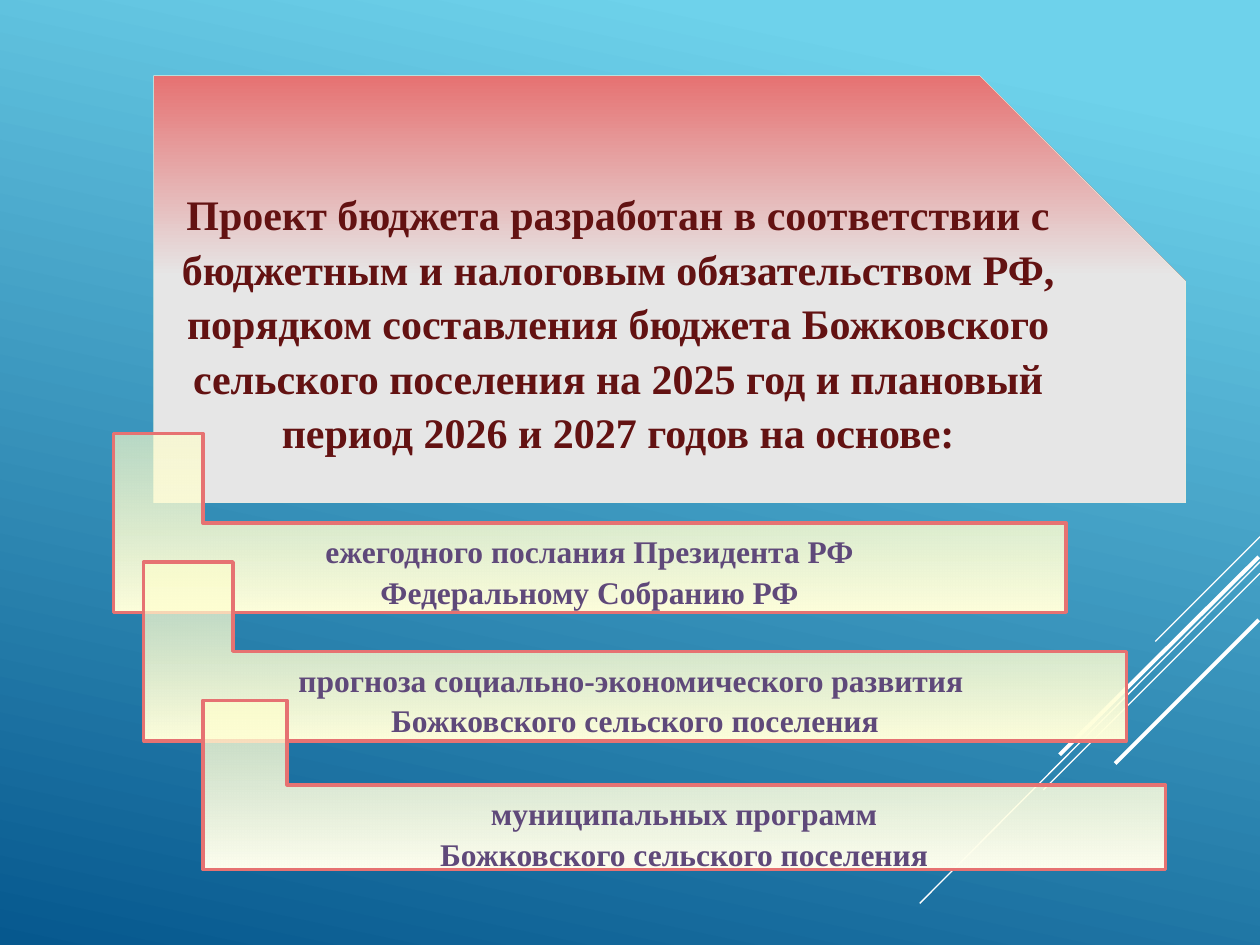
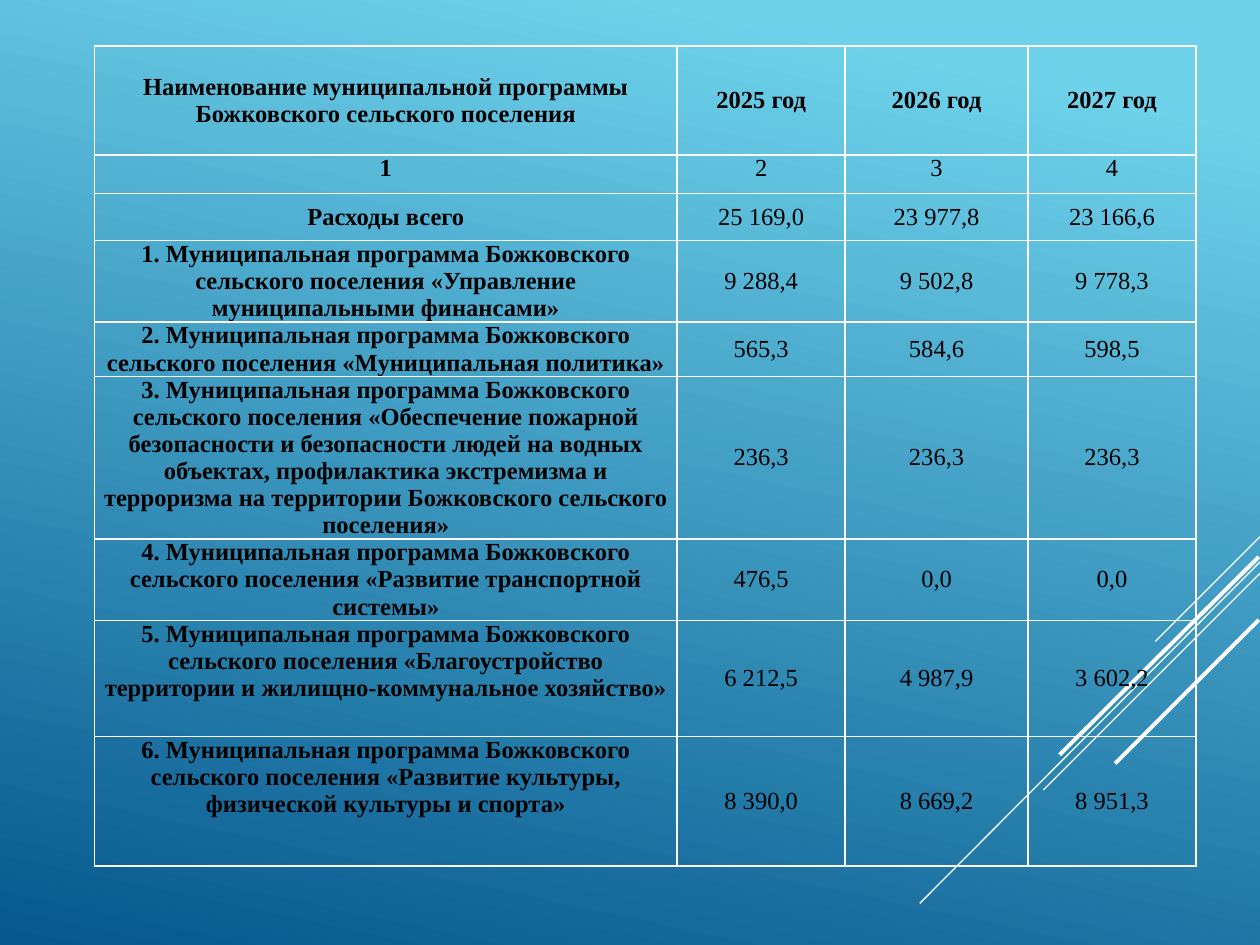
import pptx
import pptx.dml.color
import pptx.enum.shapes
import pptx.enum.text
import pptx.oxml
import pptx.oxml.ns
import pptx.util
from lxml import etree

Pt = pptx.util.Pt
Shapes = pptx.enum.shapes.MSO_SHAPE
Anchor = pptx.enum.text.MSO_ANCHOR
qn = pptx.oxml.ns.qn

FONT = "Times New Roman"
COLORS = {
    "sky": "6ED2EB", "deep": "06588E", "white": "FFFFFF", "black": "000000",
    "coral": "E67272", "grey": "E6E6E6", "mint": "EAF1DD", "maroon": "631212",
    "violet": "5F497A", "cream": "FFFFCC", "pale": "FFFFDB", "ivory": "FFFFEF",
}

# start x, start y, end x, end y, width
STRIPES = [
    (720, 306.7, 660.2, 366.5, 0.75),
    (720, 321.1, 525.6, 516.2, 0.75),
    (720, 327.6, 596.2, 451.4, 0.75),
    (719.3, 318.2, 605.5, 431.3, 2.25),
    (719.3, 354.2, 637.2, 436.3, 2.25),
]

HEADING = (
    "Проект бюджета разработан в соответствии с бюджетным и налоговым "
    "обязательством РФ, порядком составления бюджета Божковского сельского "
    "поселения на 2025 год и плановый период 2026 и 2027 годов на основе:"
)

# position and size, lower gradient colour, opacity at the top, lines
STEPS = [
    ((64.8, 247.7, 544.3, 102.2), "pale", 64,
     ["ежегодного послания Президента РФ", "Федеральному Собранию РФ"]),
    ((82.1, 321.1, 561.6, 102.2), "pale", 60,
     ["прогноза социально-экономического развития ",
      "Божковского сельского поселения"]),
    ((115.9, 400.3, 550.1, 96.5), "ivory", 70,
     ["муниципальных программ", "Божковского сельского поселения"]),
]

PROGRAM = "Муниципальная программа Божковского сельского поселения"
COLUMN_WIDTHS = [333, 96, 104.5, 96]
# row height, cells
BUDGET_ROWS = [
    (62.3, ["Наименование муниципальной программы Божковского сельского поселения",
            "2025 год", "2026 год", "2027 год"]),
    (22, ["1", "2", "3", "4"]),
    (27.1, ["Расходы всего", "25 169,0", "23 977,8", "23 166,6"]),
    (46.5, [f"1. {PROGRAM} «Управление муниципальными финансами»",
            "9 288,4", "9 502,8", "9 778,3"]),
    (31, [f"2. {PROGRAM} «Муниципальная политика»",
          "565,3", "584,6", "598,5"]),
    (93, [f"3. {PROGRAM} «Обеспечение пожарной безопасности и безопасности "
          "людей на водных объектах, профилактика экстремизма и терроризма "
          "на территории Божковского сельского поселения»",
          "236,3", "236,3", "236,3"]),
    (46.5, [f"4. {PROGRAM} «Развитие транспортной системы»",
            "476,5", "0,0", "0,0"]),
    (66.5, [f"5. {PROGRAM} «Благоустройство территории и "
            "жилищно-коммунальное хозяйство»",
            "6 212,5", "4 987,9", "3 602,2"]),
    (74, [f"6. {PROGRAM} «Развитие культуры, физической культуры и спорта»",
          "8 390,0", "8 669,2", "8 951,3"]),
]


def rgb(name):
    return pptx.dml.color.RGBColor.from_string(COLORS[name])


def write_text(frame, lines, size, color, bold=True, spacing=1.0):
    """Fill a text frame with centred paragraphs, one for each line."""
    frame.word_wrap = True
    for index, line in enumerate(lines):
        para = frame.add_paragraph() if index else frame.paragraphs[0]
        para.alignment = pptx.enum.text.PP_ALIGN.CENTER
        para.line_spacing = spacing
        para.space_before = Pt(0)
        span = para.add_run()
        span.text = line
        span.font.name = FONT
        span.font.size = Pt(size)
        span.font.bold = bold
        span.font.color.rgb = rgb(color)


def fill_gradient(fill, first, last, clockwise=90, start=0, end=1, opacity=None):
    """Apply a two-colour gradient; opacity is the first colour's percentage."""
    fill.gradient()
    fill.gradient_angle = 360 - clockwise
    stops = fill.gradient_stops
    for stop, name, position in zip(stops, (first, last), (start, end)):
        stop.color.rgb = rgb(name)
        stop.position = position
    if opacity is not None:
        color = fill._fill._gradFill.find(".//" + qn("a:srgbClr"))
        etree.SubElement(color, qn("a:alpha"), val=str(opacity * 1000))


def add_box(page, kind, place, line_color, line_width):
    box = page.shapes.add_shape(kind, *map(Pt, place))
    box.shadow.inherit = False
    box.line.color.rgb = rgb(line_color)
    box.line.width = Pt(line_width)
    box.text_frame.vertical_anchor = Anchor.TOP
    return box


def decorate_master(deck, page):
    """Put the background and the diagonal stripes on the slide master."""
    master = deck.slide_master
    fill_gradient(master.background.fill, "sky", "deep", clockwise=102, start=0.1)
    for *ends, width in STRIPES:
        stripe = page.shapes.add_connector(
            pptx.enum.shapes.MSO_CONNECTOR.STRAIGHT, *map(Pt, ends))
        stripe.line.color.rgb = rgb("white")
        stripe.line.width = Pt(width)
        etree.SubElement(stripe.element.spPr, qn("a:effectLst"))
        master.shapes.element.append(stripe.element)


def add_heading(page):
    left, top, width, height = 87.8, 43.2, 589.7, 244.1
    snip = 0.482
    panel = add_box(page, Shapes.SNIP_1_RECTANGLE,
                    (left, top, width, height), "mint", 0.25)
    panel.adjustments[0] = snip
    fill_gradient(panel.fill, "coral", "grey", end=0.47)

    inset = snip * height / 2
    title = page.shapes.title
    title.left, title.top = Pt(left), Pt(top + inset)
    title.width, title.height = Pt(width - inset), Pt(height - inset)
    title.text_frame.vertical_anchor = Anchor.TOP
    title.text_frame.auto_size = pptx.enum.text.MSO_AUTO_SIZE.NONE
    write_text(title.text_frame, [HEADING], 24, "maroon", spacing=1.08)
    panel.element.addnext(title.element)


def add_step(page, place, lower_color, opacity, lines):
    step = add_box(page, Shapes.CORNER, place, "coral", 2)
    fill_gradient(step.fill, "cream", lower_color, opacity=opacity)
    write_text(step.text_frame, lines, 18, "violet", spacing=1.08)


def add_borders(cell):
    properties = cell._tc.get_or_add_tcPr()
    for side in ("lnL", "lnR", "lnT", "lnB"):
        line = etree.SubElement(properties, qn("a:" + side), w=str(int(Pt(1))))
        solid = etree.SubElement(line, qn("a:solidFill"))
        etree.SubElement(solid, qn("a:srgbClr"), val=COLORS["white"])


def add_budget_table(page):
    height = sum(row_height for row_height, _ in BUDGET_ROWS)
    frame = page.shapes.add_table(
        len(BUDGET_ROWS), len(COLUMN_WIDTHS),
        Pt(54), Pt(26.2), Pt(sum(COLUMN_WIDTHS)), Pt(height))
    table = frame.table
    table.first_row = table.horz_banding = False
    for column, width in zip(table.columns, COLUMN_WIDTHS):
        column.width = Pt(width)
    for row, (row_height, texts) in enumerate(BUDGET_ROWS):
        table.rows[row].height = Pt(row_height)
        for column, text in enumerate(texts):
            cell = table.cell(row, column)
            cell.margin_left = cell.margin_right = Pt(4.3)
            cell.margin_top = cell.margin_bottom = 0
            at_top = row == 1 or (row > 2 and column == 0)
            cell.vertical_anchor = Anchor.TOP if at_top else Anchor.MIDDLE
            add_borders(cell)
            cell.fill.background()
            write_text(cell.text_frame, [text], 14, "black",
                       bold=row == 0 or column == 0)


def main():
    deck = pptx.Presentation()
    deck.slide_width, deck.slide_height = Pt(720), Pt(540)
    title_only, blank = deck.slide_layouts[5], deck.slide_layouts[6]

    basis = deck.slides.add_slide(title_only)
    decorate_master(deck, basis)
    add_heading(basis)
    for step in STEPS:
        add_step(basis, *step)

    add_budget_table(deck.slides.add_slide(blank))
    deck.save("out.pptx")


if __name__ == "__main__":
    main()
